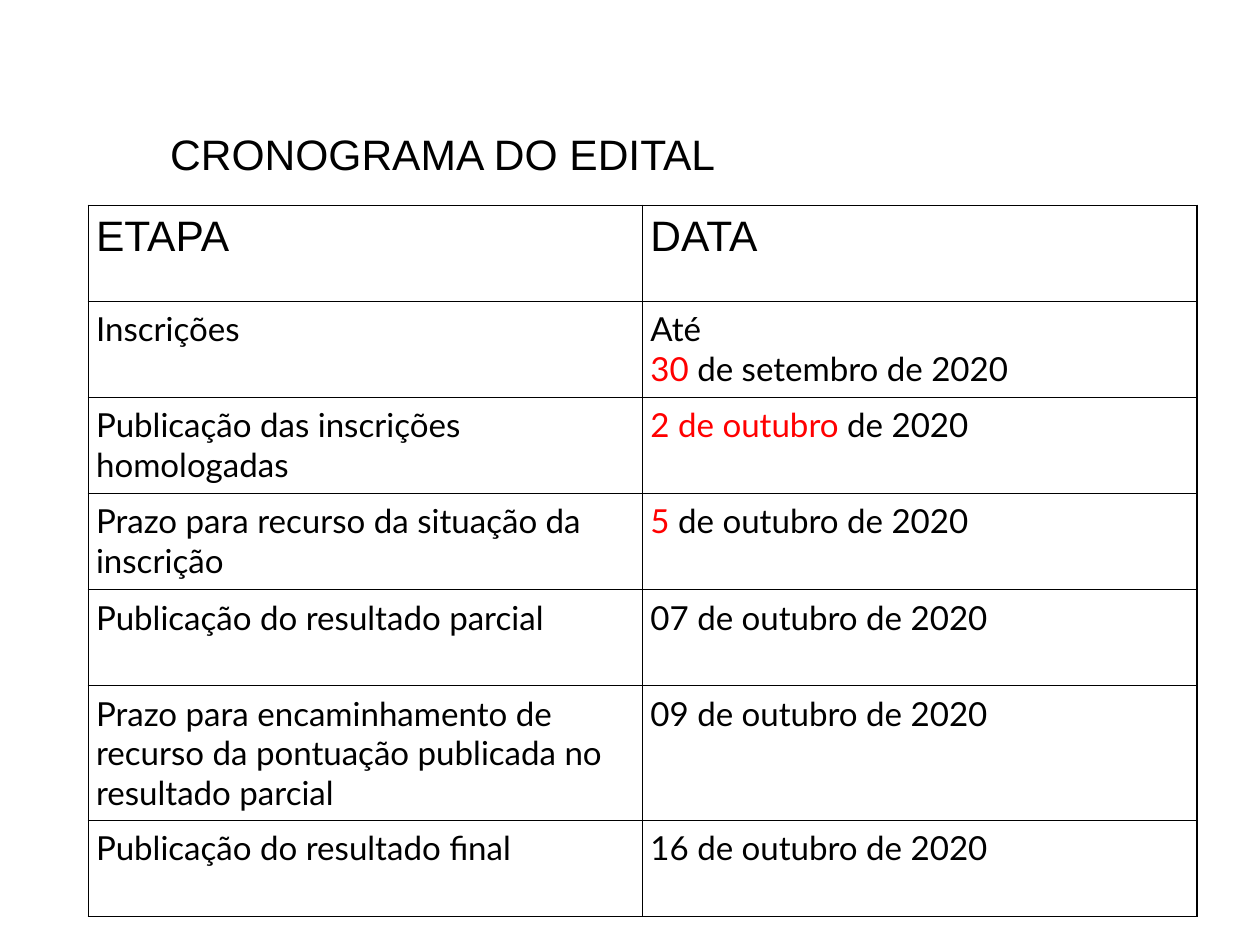
import pptx
import pptx.dml.color
import pptx.oxml
import pptx.oxml.ns
import pptx.util

Pt = pptx.util.Pt
BLACK = pptx.dml.color.RGBColor(0x00, 0x00, 0x00)
RED = pptx.dml.color.RGBColor(0xFF, 0x00, 0x00)

HEADER = ("ETAPA", "DATA")
# Each date is a list of paragraphs: (red part, black part)
STEPS = [
    ("Inscrições", [("", "Até"), ("30 ", "de setembro de 2020")]),
    ("Publicação das inscrições homologadas", [("2 de outubro", " de 2020")]),
    ("Prazo para recurso da situação da inscrição", [("5", " de outubro de 2020")]),
    ("Publicação do resultado parcial", [("", "07 de outubro de 2020")]),
    ("Prazo para encaminhamento de recurso da pontuação publicada no resultado parcial",
     [("", "09 de outubro de 2020")]),
    ("Publicação do resultado final", [("", "16 de outubro de 2020")]),
]


def add_text(p, text, size=21, font="Lato", color=BLACK):
    r = p.add_run()
    r.text = text
    r.font.size = Pt(size)
    r.font.name = font
    r.font.color.rgb = color


def add_title(s, x, y, w, h):
    tf = s.shapes.add_textbox(Pt(x), Pt(y), Pt(w), Pt(h)).text_frame
    tf.word_wrap = True
    add_text(tf.paragraphs[0], "CRONOGRAMA DO EDITAL", size=27, font="Arial")


def format_cell(cell, inset=5):
    cell.margin_left = cell.margin_right = Pt(inset)
    cell.margin_top = cell.margin_bottom = Pt(inset)
    # Cell borders
    for side in ("lnL", "lnR", "lnT", "lnB"):
        cell._tc.get_or_add_tcPr().append(pptx.oxml.parse_xml(
            f'<a:{side} {pptx.oxml.ns.nsdecls("a")} w="{Pt(1)}"><a:solidFill>'
            f'<a:srgbClr val="{BLACK}"/></a:solidFill></a:{side}>'))
    cell.fill.background()


def add_schedule(s, x, y, w, row_h, tall_row_h):
    rows = len(STEPS) + 1
    table = s.shapes.add_table(rows, 2, Pt(x), Pt(y), Pt(w), Pt(row_h * rows)).table
    table.first_row = table.horz_banding = False
    for col in table.columns:
        col.width = Pt(w / 2)
    for row in table.rows:
        row.height = Pt(row_h)
    table.rows[5].height = Pt(tall_row_h)
    for cell in table.iter_cells():
        format_cell(cell)

    # Header row
    for i, label in enumerate(HEADER):
        p = table.cell(0, i).text_frame.paragraphs[0]
        add_text(p, label, size=27, font="Arial")

    # Steps and their dates
    for i, (step, date) in enumerate(STEPS, start=1):
        add_text(table.cell(i, 0).text_frame.paragraphs[0], step)
        tf = table.cell(i, 1).text_frame
        for j, (red, black) in enumerate(date):
            p = tf.add_paragraph() if j else tf.paragraphs[0]
            if red:
                add_text(p, red, color=RED)
            add_text(p, black)


def main():
    prs = pptx.Presentation()
    prs.slide_width, prs.slide_height = Pt(800), Pt(600)
    s = prs.slides.add_slide(prs.slide_layouts[6])
    add_title(s, x=101, y=78, w=660, h=38)
    add_schedule(s, x=56, y=130.4, w=704, row_h=61, tall_row_h=85.6)
    prs.save("out.pptx")


if __name__ == "__main__":
    main()
